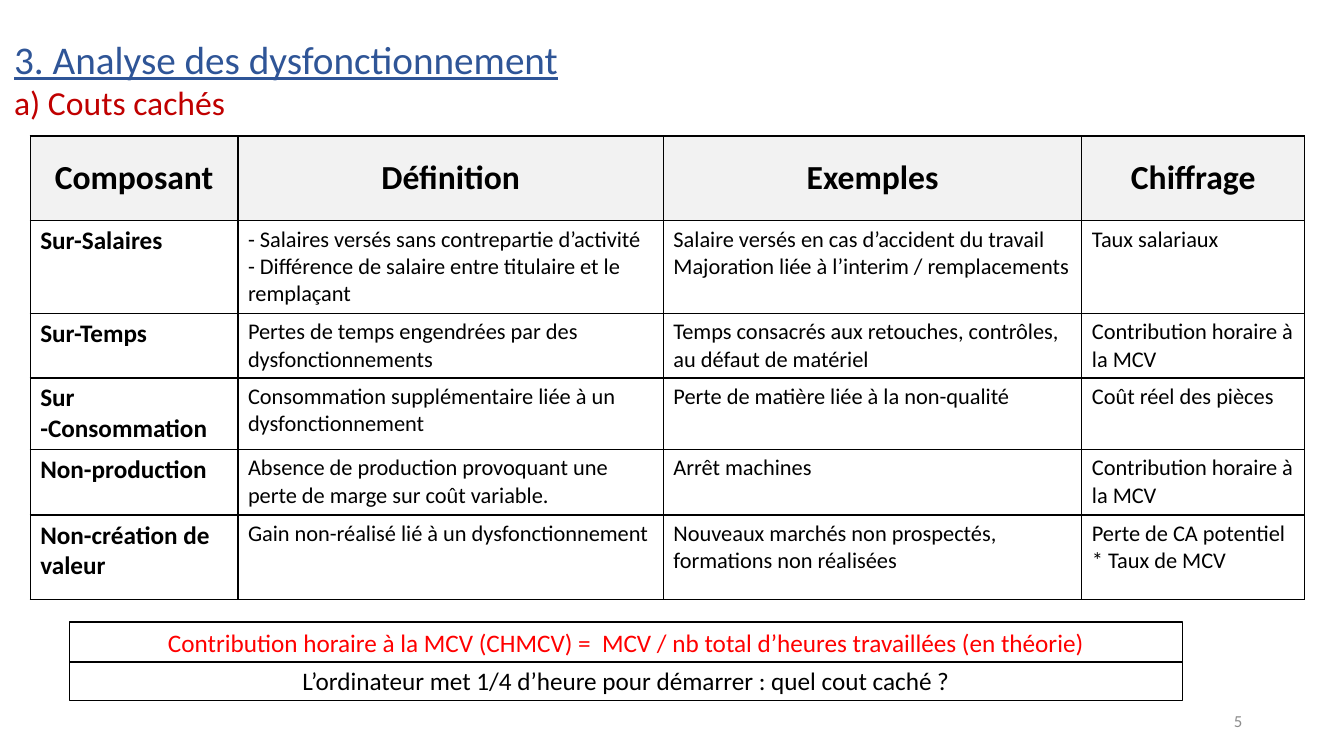
import pptx
import pptx.util
import pptx.dml.color
import pptx.enum.shapes
import pptx.enum.text
import pptx.oxml
import pptx.oxml.ns

Inches = pptx.util.Inches
Pt = pptx.util.Pt
RGBColor = pptx.dml.color.RGBColor
ALIGN = pptx.enum.text.PP_ALIGN
ANCHOR = pptx.enum.text.MSO_ANCHOR

FONT = "Calibri"
BLACK = RGBColor(0x00, 0x00, 0x00)
WHITE = RGBColor(0xFF, 0xFF, 0xFF)
BLUE = RGBColor(0x2F, 0x55, 0x97)
MAROON = RGBColor(0xC0, 0x00, 0x00)
RED = RGBColor(0xFF, 0x00, 0x00)
GREY = RGBColor(0x8C, 0x8C, 0x8C)
PALE = RGBColor(0xF2, 0xF2, 0xF2)

TITLE = "3. Analyse des dysfonctionnement"
PART = "a) Couts cachés"
NUMBER = "5"
HEADS = ["Composant", "Définition", "Exemples", "Chiffrage"]
COSTS = [
    ["Sur-Salaires",
     "- Salaires versés sans contrepartie d’activité\n"
     "- Différence de salaire entre titulaire et le remplaçant",
     "Salaire versés en cas d’accident du travail\n"
     "Majoration liée à l’interim / remplacements",
     "Taux salariaux"],
    ["Sur-Temps",
     "Pertes de temps engendrées par des dysfonctionnements",
     "Temps consacrés aux retouches, contrôles, au défaut de matériel",
     "Contribution horaire à la MCV"],
    ["Sur -Consommation",
     "Consommation supplémentaire liée à un dysfonctionnement",
     "Perte de matière liée à la non-qualité",
     "Coût réel des pièces"],
    ["Non-production",
     "Absence de production provoquant une perte de marge sur coût variable.",
     "Arrêt machines",
     "Contribution horaire à la MCV"],
    ["Non-création de valeur",
     "Gain non-réalisé lié à un dysfonctionnement",
     "Nouveaux marchés non prospectés, formations non réalisées",
     "Perte de CA potentiel * Taux de MCV"],
]
NOTES = [
    ("L’ordinateur met 1/4 d’heure pour démarrer : quel cout caché ?", 6.55, BLACK),
    ("Contribution horaire à la MCV (CHMCV) =  MCV / nb total d’heures travaillées (en théorie)",
     6.17, RED),
]
WIDTHS = [2.06, 4.22, 4.15, 2.21]
HEIGHTS = [0.84, 0.92, 0.64, 0.71, 0.65, 0.84]


def write(frame, text, size, color, bold=False, align=ALIGN.LEFT, line=False):
    for i, part in enumerate(text.split("\n")):
        para = frame.paragraphs[0] if i == 0 else frame.add_paragraph()
        add_run(para, part, size, color, bold, align, line)


def add_run(para, text, size, color, bold, align, line=False):
    para.alignment = align
    run = para.add_run()
    run.text = text
    font = run.font
    font.name, font.size, font.bold = FONT, Pt(size), bold
    font.underline = line
    font.color.rgb = color


def border(cell):
    props = cell._tc.get_or_add_tcPr()
    for side in ("lnL", "lnR", "lnT", "lnB"):
        props.append(pptx.oxml.parse_xml(
            f'<a:{side} {pptx.oxml.ns.nsdecls("a")} w="{Pt(1)}"><a:solidFill>'
            f'<a:srgbClr val="{BLACK}"/></a:solidFill></a:{side}>'))


def add_title(slide):
    head = slide.shapes.title
    head.left, head.top = Inches(0.04), Inches(0.3)
    head.width, head.height = Inches(11.11), Inches(0.62)
    frame = head.text_frame
    frame.auto_size = pptx.enum.text.MSO_AUTO_SIZE.NONE
    frame.vertical_anchor = ANCHOR.TOP
    write(frame, TITLE, 28, BLUE, line=True)
    add_run(frame.add_paragraph(), PART, 24, MAROON, False, ALIGN.LEFT)


def add_costs(slide):
    rows = [HEADS] + COSTS
    table = slide.shapes.add_table(
        len(rows), len(HEADS), Inches(0.3), Inches(1.35),
        Inches(sum(WIDTHS)), Inches(sum(HEIGHTS))).table
    table.horz_banding = False
    for col, width in zip(table.columns, WIDTHS):
        col.width = Inches(width)
    for row, height in zip(table.rows, HEIGHTS):
        row.height = Inches(height)
    for r, row in enumerate(rows):
        for c, text in enumerate(row):
            cell = table.cell(r, c)
            border(cell)
            if r == 0:
                cell.fill.solid()
                cell.fill.fore_color.rgb = PALE
                cell.vertical_anchor = ANCHOR.MIDDLE
                write(cell.text_frame, text, 24, BLACK, True, ALIGN.CENTER)
            else:
                cell.fill.background()
                write(cell.text_frame, text, 18 if c == 0 else 16, BLACK, c == 0)


def add_note(slide, text, top, color):
    box = slide.shapes.add_shape(
        pptx.enum.shapes.MSO_SHAPE.RECTANGLE,
        Inches(0.69), Inches(top), Inches(11.04), Inches(0.4))
    box.shadow.inherit = False
    box.fill.solid()
    box.fill.fore_color.rgb = WHITE
    box.line.color.rgb = BLACK
    box.line.width = Pt(1)
    frame = box.text_frame
    frame.word_wrap = True
    frame.vertical_anchor = ANCHOR.TOP
    write(frame, text, 18, color, align=ALIGN.CENTER)


def add_number(slide):
    box = slide.shapes.add_textbox(Inches(9.42), Inches(6.95), Inches(3), Inches(0.4))
    frame = box.text_frame
    frame.word_wrap = True
    frame.vertical_anchor = ANCHOR.MIDDLE
    write(frame, NUMBER, 12, GREY, align=ALIGN.RIGHT)


def main():
    deck = pptx.Presentation()
    deck.slide_width, deck.slide_height = Inches(13.33), Inches(7.5)
    slide = deck.slides.add_slide(deck.slide_layouts[5])
    add_number(slide)
    add_title(slide)
    add_costs(slide)
    for text, top, color in NOTES:
        add_note(slide, text, top, color)
    deck.save("out.pptx")


if __name__ == "__main__":
    main()
